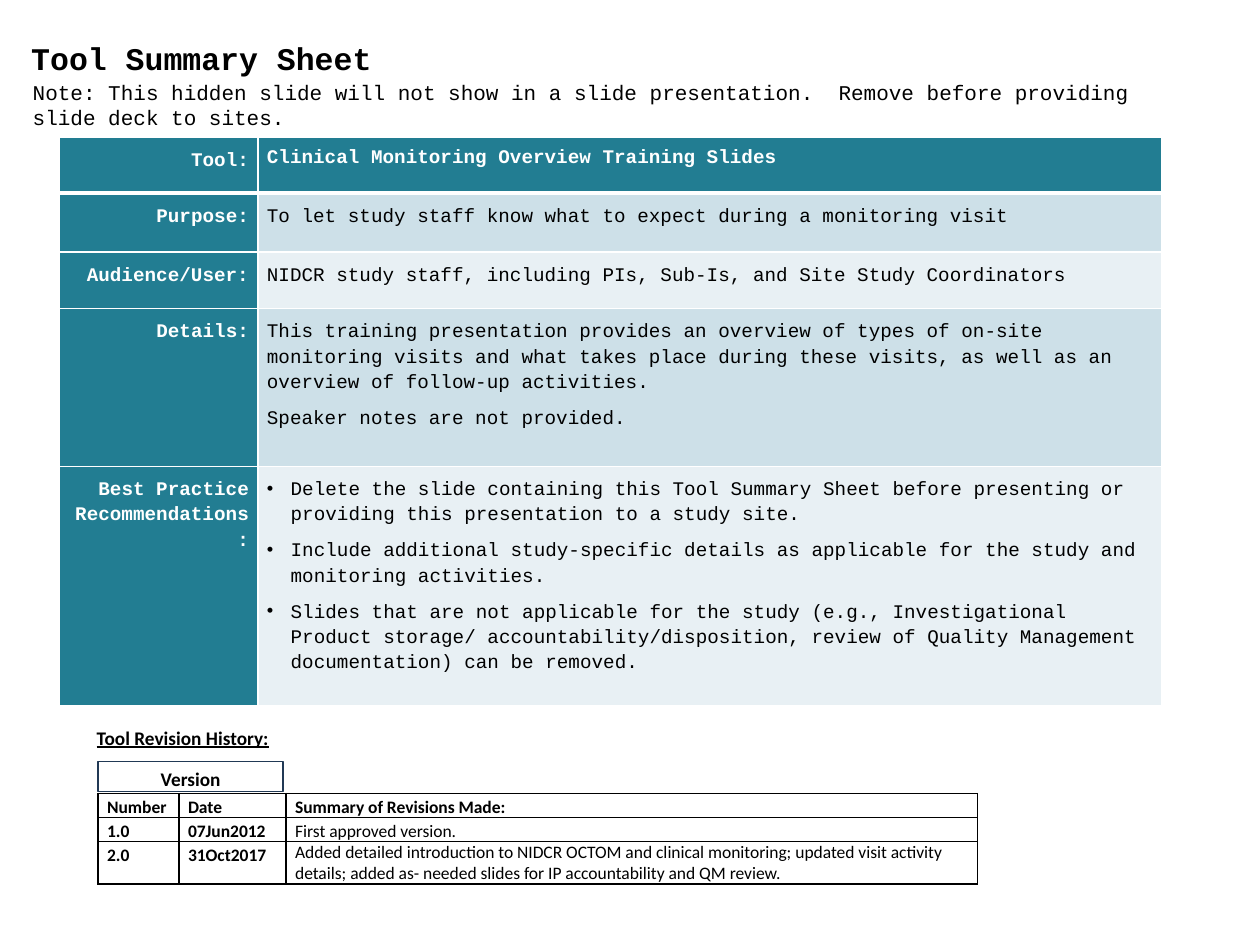
"""Build the tool summary sheet slide with its revision history."""
from lxml import etree
from pptx import Presentation
from pptx import util as u
from pptx.dml.color import RGBColor
from pptx.enum import shapes, text
from pptx.oxml import ns

BLACK = RGBColor(0x00, 0x00, 0x00)
WHITE = RGBColor(0xFF, 0xFF, 0xFF)
TEAL = RGBColor(0x22, 0x7D, 0x92)
BLUE_BAND = RGBColor(0xCD, 0xE0, 0xE8)
PALE_BAND = RGBColor(0xE8, 0xF0, 0xF4)
NAVY = RGBColor(0x21, 0x39, 0x55)


def write(paragraph, words, font, size, color=BLACK, bold=False):
    run = paragraph.add_run()
    run.text = words
    run.font.name = font
    run.font.size = u.Pt(size)
    run.font.color.rgb = color
    run.font.bold = bold
    return run


def prepare(cell, color, bottom_width, top_margin):
    cell.margin_left = cell.margin_right = u.Cm(0.18)
    cell.margin_top = u.Cm(top_margin)
    cell.margin_bottom = u.Cm(0)
    properties = cell._tc.get_or_add_tcPr()
    for side in ("lnL", "lnR", "lnT", "lnB"):
        width = bottom_width if side == "lnB" else 1
        line = etree.SubElement(properties, ns.qn("a:" + side), w=str(u.Pt(width)))
        solid = etree.SubElement(line, ns.qn("a:solidFill"))
        etree.SubElement(solid, ns.qn("a:srgbClr"), val=str(color))


deck = Presentation()
deck.slide_width = u.Cm(25.4)
deck.slide_height = u.Cm(19.05)
slide = deck.slides.add_slide(deck.slide_layouts[6])

title = slide.shapes.add_textbox(u.Cm(0.38), u.Cm(0.43), u.Cm(21.59), u.Cm(1.24)).text_frame
title.word_wrap = True
title.vertical_anchor = text.MSO_ANCHOR.BOTTOM
write(title.paragraphs[0], "Tool Summary Sheet", "Courier New", 18, bold=True)

note = slide.shapes.add_textbox(u.Cm(0.41), u.Cm(1.47), u.Cm(23.5), u.Cm(0.76)).text_frame
note.word_wrap = True
write(
    note.paragraphs[0],
    "Note: This hidden slide will not show in a slide presentation.  "
    "Remove before providing slide deck to sites.",
    "Courier New", 12,
)

summary_rows = [
    ("Tool:", 1.12, ["Clinical Monitoring Overview Training Slides"]),
    ("Purpose:", 1.19, ["To let study staff know what to expect during a monitoring visit"]),
    ("Audience/User:", 1.14,
     ["NIDCR study staff, including PIs, Sub-Is, and Site Study Coordinators"]),
    ("Details:", 3.18, [
        "This training presentation provides an overview of types of on-site monitoring visits "
        "and what takes place during these visits, as well as an overview of follow-up activities.",
        "Speaker notes are not provided.",
    ]),
    ("Best Practice Recommendations:", 4.83, [
        "Delete the slide containing this Tool Summary Sheet before presenting or providing "
        "this presentation to a study site.",
        "Include additional study-specific details as applicable for the study and "
        "monitoring activities.",
        "Slides that are not applicable for the study (e.g., Investigational Product storage/ "
        "accountability/disposition, review of Quality Management documentation) can be removed.",
    ]),
]
summary = slide.shapes.add_table(
    len(summary_rows), 2, u.Cm(1.19), u.Cm(2.77), u.Cm(22.22), u.Cm(11.46)).table
summary.horz_banding = False
summary.columns[0].width = u.Cm(4.01)
summary.columns[1].width = u.Cm(18.21)
for index, (label, height, details) in enumerate(summary_rows):
    header = index == 0
    bulleted = index == len(summary_rows) - 1
    summary.rows[index].height = u.Cm(height)
    for column, lines in enumerate(([label], details)):
        cell = summary.cell(index, column)
        prepare(cell, WHITE, 3 if header else 1, 0.2)
        highlighted = header or column == 0
        band = BLUE_BAND if index % 2 else PALE_BAND
        cell.fill.solid()
        cell.fill.fore_color.rgb = TEAL if highlighted else band
        for position, line in enumerate(lines):
            frame = cell.text_frame
            paragraph = frame.add_paragraph() if position else frame.paragraphs[0]
            if bulleted and column == 1:
                indents = paragraph._p.get_or_add_pPr()
                indents.set("marL", str(u.Cm(0.48)))
                indents.set("indent", str(u.Cm(-0.48)))
                etree.SubElement(indents, ns.qn("a:buChar"), char="•")
            paragraph.alignment = text.PP_ALIGN.LEFT if column else text.PP_ALIGN.RIGHT
            paragraph.line_spacing = 1.0 if header and column else 1.15
            paragraph.space_after = u.Pt(3)
            if position:
                paragraph.space_before = u.Pt(3)
            write(paragraph, line, "Courier New", 11,
                  WHITE if highlighted else BLACK, highlighted)

history_title = slide.shapes.add_textbox(
    u.Cm(1.7), u.Cm(14.5), u.Cm(4.88), u.Cm(0.74)).text_frame
history_title.word_wrap = True
history_title.vertical_anchor = text.MSO_ANCHOR.MIDDLE
write(history_title.paragraphs[0], "Tool Revision History:", "Calibri", 11,
      bold=True).font.underline = True

version = slide.shapes.add_shape(
    shapes.MSO_SHAPE.RECTANGLE, u.Cm(1.98), u.Cm(15.35), u.Cm(3.73), u.Cm(0.61))
version.shadow.inherit = False
version.fill.background()
version.line.color.rgb = NAVY
version.line.width = u.Pt(1)
version_frame = version.text_frame
version_frame.word_wrap = True
version_frame.vertical_anchor = text.MSO_ANCHOR.TOP
version_frame.margin_left = version_frame.margin_right = u.Cm(0)
version_frame.margin_top = version_frame.margin_bottom = u.Cm(0.05)
version_line = version_frame.paragraphs[0]
version_line.alignment = text.PP_ALIGN.CENTER
version_line.line_spacing = 1.14
version_line.space_after = u.Pt(3)
write(version_line, "Version", "Calibri", 11, bold=True)

revisions = [
    ("Number", "Date", "Summary of Revisions Made:"),
    ("1.0", "07Jun2012", "First approved version."),
    ("2.0", "31Oct2017",
     "Added detailed introduction to NIDCR OCTOM and clinical monitoring; updated visit "
     "activity details; added as- needed slides for IP accountability and QM review."),
]
history = slide.shapes.add_table(
    len(revisions), 3, u.Cm(1.98), u.Cm(16), u.Cm(17.73), u.Cm(1.81)).table
history.horz_banding = False
history.first_row = False
for column, width in enumerate((1.63, 2.16, 13.94)):
    history.columns[column].width = u.Cm(width)
for index, (height, revision) in enumerate(zip((0.48, 0.48, 0.85), revisions)):
    history.rows[index].height = u.Cm(height)
    for column, words in enumerate(revision):
        cell = history.cell(index, column)
        prepare(cell, BLACK, 1, 0)
        cell.fill.background()
        paragraph = cell.text_frame.paragraphs[0]
        paragraph.line_spacing = 1.0 if index == 2 and column == 2 else 1.14
        paragraph.space_after = u.Pt(3)
        write(paragraph, words, "Calibri", 10, bold=index == 0 or column < 2)

deck.save("out.pptx")
